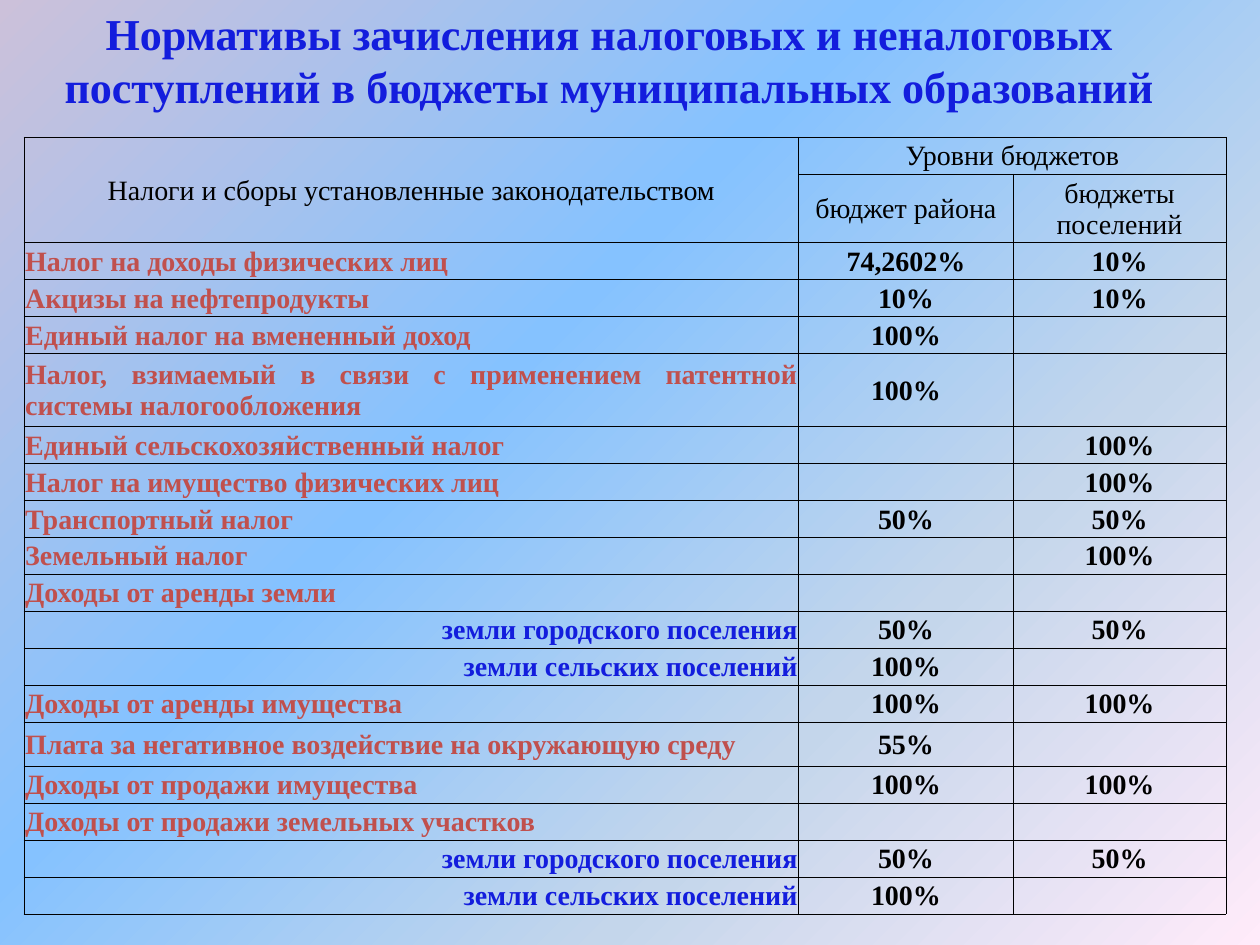
from copy import deepcopy
from typing import NamedTuple

from lxml import etree
from pptx import Presentation
from pptx.dml.color import RGBColor
from pptx.enum.text import MSO_ANCHOR, PP_ALIGN
from pptx.oxml.ns import qn
from pptx.util import Inches, Pt

MIDDLE = MSO_ANCHOR.MIDDLE
LEFT, CENTER, RIGHT = PP_ALIGN.JUSTIFY, PP_ALIGN.CENTER, PP_ALIGN.RIGHT

BLACK = RGBColor(0x00, 0x00, 0x00)
BLUE = RGBColor(0x13, 0x1D, 0xDD)
RED = RGBColor(0xC0, 0x50, 0x4D)
STOPS = [
    (0, RGBColor(0xCC, 0xC1, 0xDA)),
    (0.4, RGBColor(0x85, 0xC2, 0xFF)),
    (0.7, RGBColor(0xC4, 0xD6, 0xEB)),
    (1, RGBColor(0xFF, 0xEB, 0xFA)),
]
FONT = "Times New Roman"
SIZE = Pt(16)
INSET = Inches(0.01)
COLS = [6.15, 1.7, 1.69]  # inches
HEIGHT = 6.13  # inches, shared out by row weight
HEADS = [1, 1.72]  # row weights of the header


class Tax(NamedTuple):
    name: str
    area: str = ""
    town: str = ""
    sub: bool = False
    weight: float = 1


CITY = Tax("земли городского поселения", "50%", "50%", sub=True)
RURAL = Tax("земли сельских поселений", "100%", sub=True)
TAXES = [
    Tax("Налог на доходы физических лиц", "74,2602%", "10%"),
    Tax("Акцизы на нефтепродукты", "10%", "10%"),
    Tax("Единый налог на вмененный доход", "100%"),
    Tax("Налог, взимаемый в связи с применением патентной системы "
        "налогообложения", "100%", weight=1.97),
    Tax("Единый сельскохозяйственный налог", town="100%"),
    Tax("Налог на имущество физических лиц", town="100%"),
    Tax("Транспортный налог", "50%", "50%"),
    Tax("Земельный налог", town="100%"),
    Tax("Доходы от аренды земли"),
    CITY,
    RURAL,
    Tax("Доходы от аренды имущества", "100%", "100%"),
    Tax("Плата за негативное воздействие на окружающую среду", "55%",
        weight=1.19),
    Tax("Доходы от продажи имущества", "100%", "100%"),
    Tax("Доходы от продажи земельных участков"),
    CITY,
    RURAL,
]


def paint(slide) -> None:
    """Fill the background with the diagonal gradient."""
    fill = slide.background.fill
    fill.gradient()
    fill.gradient_angle = 315
    stops = next(slide.element.iter(qn("a:gsLst")))
    for _ in STOPS[2:]:
        stops.append(deepcopy(stops[0]))
    for stop, (place, color) in zip(fill.gradient_stops, STOPS):
        stop.position = place
        stop.color.rgb = color


def write(frame, text: str, size: int, color: RGBColor, bold: bool,
          align: PP_ALIGN) -> None:
    para = frame.paragraphs[0]
    para.alignment = align
    run = para.add_run()
    run.text = text
    run.font.name, run.font.size = FONT, size
    run.font.bold, run.font.color.rgb = bold, color


def frame_cell(cell) -> None:
    """Clear the fill, tighten the margins and rule all four sides."""
    cell.fill.background()
    cell.vertical_anchor = MIDDLE
    cell.margin_left = cell.margin_right = cell.margin_top = INSET
    cell.margin_bottom = 0
    props = cell._tc.get_or_add_tcPr()
    for spot, side in enumerate(("lnL", "lnR", "lnT", "lnB")):
        line = etree.Element(qn(f"a:{side}"), w=str(Pt(0.5)))
        solid = etree.SubElement(line, qn("a:solidFill"))
        etree.SubElement(solid, qn("a:srgbClr"), val=str(BLACK))
        props.insert(spot, line)
    # The paragraph end keeps the body font, so the row stays low
    para = cell.text_frame.paragraphs[0]._p
    end = etree.SubElement(para, qn("a:endParaRPr"), sz=str(int(SIZE.pt * 100)))
    etree.SubElement(end, qn("a:latin"), typeface=FONT)


def put(cell, text: str, color: RGBColor = BLACK, bold: bool = True,
        align: PP_ALIGN = CENTER) -> None:
    if text:
        write(cell.text_frame, text, SIZE, color, bold, align)


def draw_table(slide) -> None:
    weights = HEADS + [tax.weight for tax in TAXES]
    unit = HEIGHT / sum(weights)
    grid = slide.shapes.add_table(
        len(weights), len(COLS), Inches(0.19), Inches(1.09),
        Inches(sum(COLS)), Inches(HEIGHT)).table
    grid.first_row = grid.horz_banding = False
    for col, width in zip(grid.columns, COLS):
        col.width = Inches(width)
    for row, weight in zip(grid.rows, weights):
        row.height = Inches(unit * weight)
    for cell in grid.iter_cells():
        frame_cell(cell)

    # Header
    grid.cell(0, 0).merge(grid.cell(1, 0))
    grid.cell(0, 1).merge(grid.cell(0, 2))
    for row, col, text in (
        (0, 0, "Налоги и сборы установленные законодательством"),
        (0, 1, "Уровни бюджетов"),
        (1, 1, "бюджет района"),
        (1, 2, "бюджеты поселений"),
    ):
        put(grid.cell(row, col), text, bold=False)

    # Taxes and their shares
    for row, tax in enumerate(TAXES, len(HEADS)):
        color, align = (BLUE, RIGHT) if tax.sub else (RED, LEFT)
        put(grid.cell(row, 0), tax.name, color, align=align)
        put(grid.cell(row, 1), tax.area)
        put(grid.cell(row, 2), tax.town)


def draw_title(slide) -> None:
    box = slide.shapes.add_textbox(
        Inches(0.31), 0, Inches(9.05), Inches(0.94))
    frame = box.text_frame
    frame.word_wrap = True
    frame.vertical_anchor = MIDDLE
    write(frame, "Нормативы зачисления налоговых и неналоговых поступлений "
          "в бюджеты муниципальных образований", Pt(25.2), BLUE, True, CENTER)


def main() -> None:
    deck = Presentation()
    deck.slide_width, deck.slide_height = Inches(10), Inches(7.5)
    slide = deck.slides.add_slide(deck.slide_layouts[6])
    paint(slide)
    draw_title(slide)
    draw_table(slide)
    deck.save("out.pptx")


if __name__ == "__main__":
    main()
